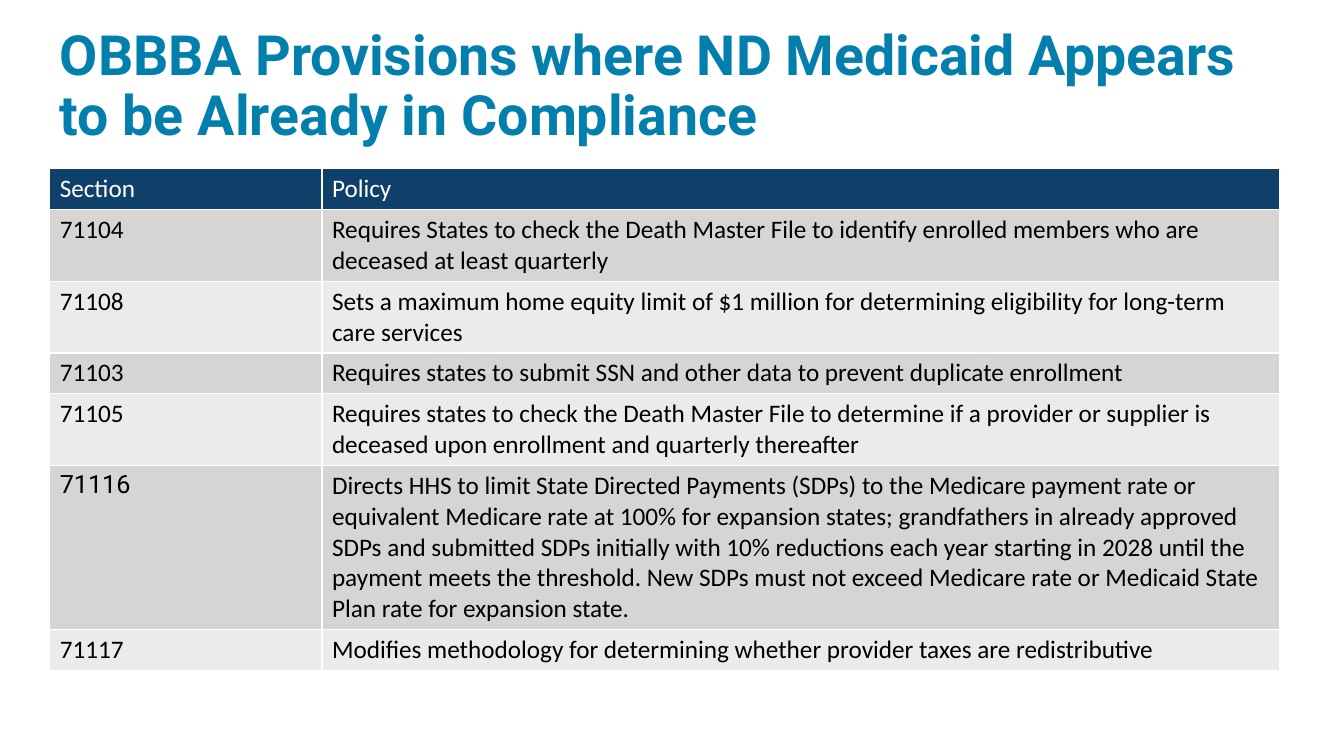
from pptx import Presentation
from pptx.dml.color import RGBColor
from pptx.enum.text import MSO_ANCHOR, MSO_AUTO_SIZE, PP_ALIGN
from pptx.util import Pt

MIDDLE = MSO_ANCHOR.MIDDLE
NO_FIT = MSO_AUTO_SIZE.NONE
LEFT = PP_ALIGN.LEFT

TITLE_BLUE = RGBColor(0x03, 0x7F, 0xAE)
HEADER_NAVY = RGBColor(0x0E, 0x40, 0x6A)
BAND_DARK = RGBColor(0xD7, 0xD5, 0xD3)
BAND_LIGHT = RGBColor(0xEC, 0xEB, 0xEA)
WHITE = RGBColor(0xFF, 0xFF, 0xFF)
BLACK = RGBColor(0, 0, 0)

LINE_HEIGHT, CELL_PADDING = 22, 7.2

# Section, policy, number of text lines the row holds
PROVISIONS = [
    ("Section", "Policy", 1),
    ("71104", "Requires States to check the Death Master File to identify "
     "enrolled members who are deceased at least quarterly", 2),
    ("71108", "Sets a maximum home equity limit of $1 million for determining "
     "eligibility for long-term care services", 2),
    ("71103", "Requires states to submit SSN and other data to prevent "
     "duplicate enrollment", 1),
    ("71105", "Requires states to check the Death Master File to determine if "
     "a provider or supplier is deceased upon enrollment and quarterly "
     "thereafter", 2),
    ("71116", "Directs HHS to limit State Directed Payments (SDPs) to the "
     "Medicare payment rate or equivalent Medicare rate at 100% for expansion "
     "states; grandfathers in already approved SDPs and submitted SDPs "
     "initially with 10% reductions each year starting in 2028 until the "
     "payment meets the threshold. New SDPs must not exceed Medicare rate or "
     "Medicaid State Plan rate for expansion state.", 5),
    ("71117", "Modifies methodology for determining whether provider taxes "
     "are redistributive", 1),
]


def add_title(s, text, left, top, width, height):
    title = s.shapes.title
    title.left, title.top = Pt(left), Pt(top)
    title.width, title.height = Pt(width), Pt(height)
    tf = title.text_frame
    tf.text = text
    tf.word_wrap = True
    tf.auto_size = NO_FIT
    tf.vertical_anchor = MIDDLE
    p = tf.paragraphs[0]
    p.alignment = LEFT
    p.line_spacing = 0.9
    p.font.name, p.font.size, p.font.bold = "Roboto", Pt(39.6), True
    p.font.color.rgb = TITLE_BLUE


def fill_cell(cell, text, fill, color, font_name):
    cell.fill.solid()
    cell.fill.fore_color.rgb = fill
    cell.text = text
    p = cell.text_frame.paragraphs[0]
    p.font.name, p.font.size, p.font.bold = font_name, Pt(18), False
    p.font.color.rgb = color


def add_provisions_table(s, left, top, width, section_width):
    heights = [lines * LINE_HEIGHT + CELL_PADDING for _, _, lines in PROVISIONS]
    table = s.shapes.add_table(len(PROVISIONS), 2, Pt(left), Pt(top),
                               Pt(width), Pt(sum(heights))).table
    table.columns[0].width = Pt(section_width)
    table.columns[1].width = Pt(width - section_width)
    for i, (section, policy, _) in enumerate(PROVISIONS):
        table.rows[i].height = Pt(heights[i])
        # Navy header, then alternating grey bands
        if i == 0:
            fill, color = HEADER_NAVY, WHITE
        else:
            fill, color = (BAND_DARK if i % 2 else BAND_LIGHT), BLACK
        section_font = "Roboto" if section == "71116" else "Calibri"
        fill_cell(table.cell(i, 0), section, fill, color, section_font)
        fill_cell(table.cell(i, 1), policy, fill, color, "Calibri")


def main():
    prs = Presentation()
    prs.slide_width, prs.slide_height = Pt(960), Pt(540)
    s = prs.slides.add_slide(prs.slide_layouts[5])
    add_title(s, "OBBBA Provisions where ND Medicaid Appears to be Already "
              "in Compliance", 35.5, 41, 889, 43)
    add_provisions_table(s, 35.5, 120.5, 878.5, 194.5)
    prs.save("out.pptx")


if __name__ == "__main__":
    main()
